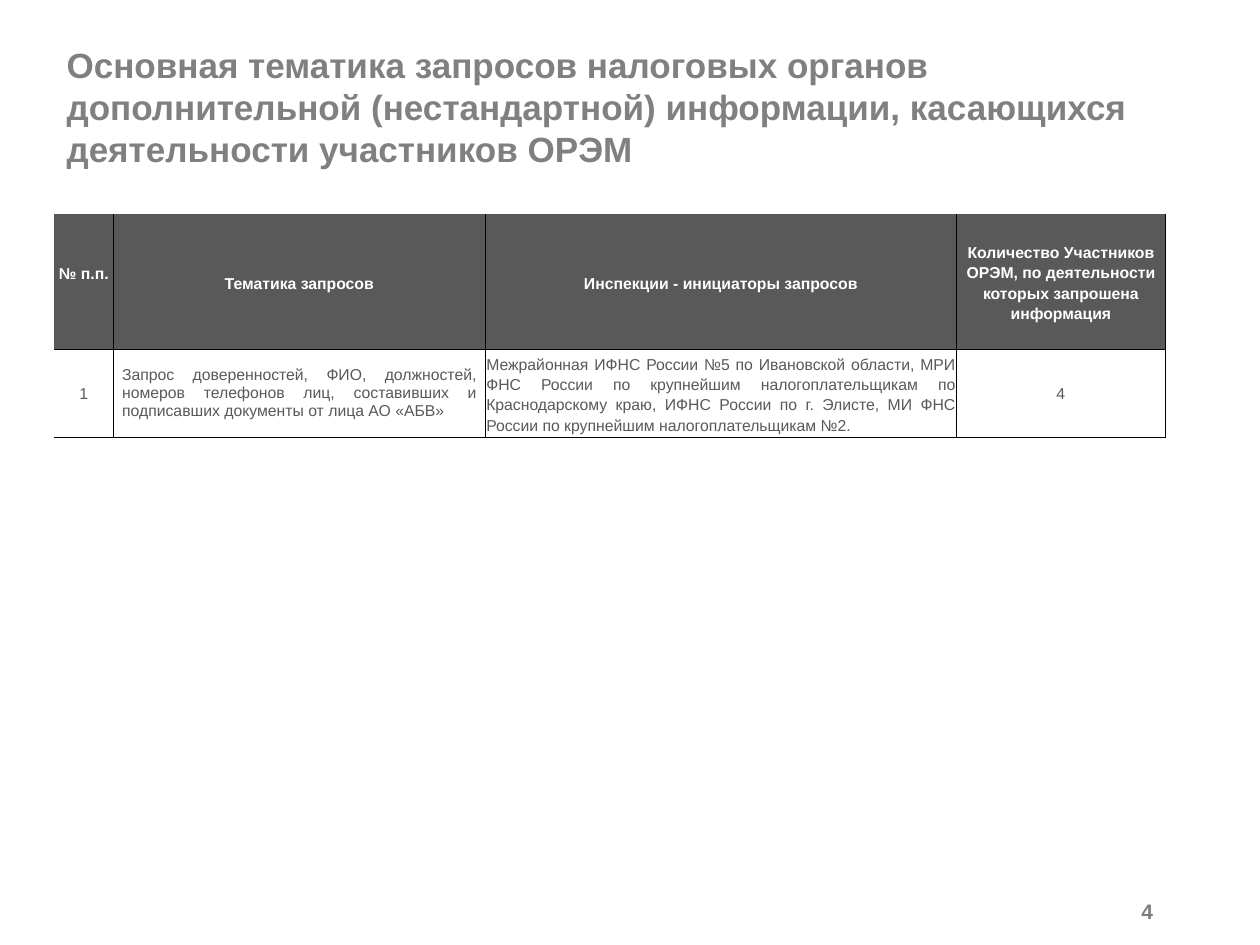
from dataclasses import dataclass

from lxml.etree import SubElement
from pptx import Presentation
from pptx.dml.color import RGBColor
from pptx.enum.text import MSO_ANCHOR as Anchor, PP_ALIGN as Align
from pptx.oxml.ns import qn
from pptx.util import Inches, Pt


@dataclass(frozen=True)
class Theme:
    font: str = "Arial"
    title_color: str = "808080"
    number_color: str = "7F7F7F"
    dark: str = "595959"
    white: str = "FFFFFF"
    border: str = "000000"
    title_size: float = 20
    number_size: float = 12
    table_size: float = 9
    border_width: float = 0.5


THEME = Theme()
TIGHT = (0.01, 0.01, 0.01, 0)
PADDED = (0.07, 0, 0.07, 0)
RAISED = (0.01, 0.01, 0.01, 0.13)

COLUMN_WIDTHS = (0.47, 2.95, 3.74, 1.66)
ROW_HEIGHTS = (1.07, 0.65)
HEADER = (
    "№ п.п.",
    "Тематика запросов",
    "Инспекции - инициаторы запросов",
    "Количество Участников ОРЭМ, по деятельности которых запрошена информация",
)
REQUEST = (
    "1",
    "Запрос доверенностей, ФИО, должностей, номеров телефонов лиц, "
    "составивших и подписавших документы от лица АО «АБВ»",
    "Межрайонная ИФНС России №5 по Ивановской области, МРИ ФНС России по "
    "крупнейшим налогоплательщикам по Краснодарскому краю, ИФНС России по "
    "г. Элисте, МИ ФНС России по крупнейшим налогоплательщикам №2.",
    "4",
)
# Alignment, line spacing and margins for each column
HEADER_FORMATS = ((Align.CENTER, 1, RAISED),) + ((Align.CENTER, 1.15, TIGHT),) * 3
REQUEST_FORMATS = (
    (Align.CENTER, 1.15, PADDED),
    (Align.JUSTIFY, 1, PADDED),
    (Align.JUSTIFY, 1.15, TIGHT),
    (Align.CENTER, 1.15, PADDED),
)


def write_text(frame, text, *, size, color, bold=False, align=Align.LEFT, spacing=1):
    frame.word_wrap = True
    paragraph = frame.paragraphs[0]
    paragraph.alignment = align
    paragraph.line_spacing = spacing
    run = paragraph.add_run()
    run.text = text
    run.font.name = THEME.font
    run.font.size = Pt(size)
    run.font.bold = bold
    run.font.color.rgb = RGBColor.from_string(color)


def set_borders(cell, hidden_sides):
    properties = cell._tc.get_or_add_tcPr()
    for side in "LRTB":
        line = SubElement(properties, qn(f"a:ln{side}"), w=str(Pt(THEME.border_width)))
        if side in hidden_sides:
            SubElement(line, qn("a:noFill"))
        else:
            fill = SubElement(line, qn("a:solidFill"))
            SubElement(fill, qn("a:srgbClr"), val=THEME.border)


class SlideBuilder:
    def __init__(self, slide, theme):
        self.slide = slide
        self.theme = theme

    def add_text(self, text, left, top, width, height, **text_format):
        box = self.slide.shapes.add_textbox(
            Inches(left), Inches(top), Inches(width), Inches(height)
        )
        box.text_frame.vertical_anchor = Anchor.MIDDLE
        write_text(box.text_frame, text, **text_format)

    def add_table(self, left, top):
        frame = self.slide.shapes.add_table(
            len(ROW_HEIGHTS), len(COLUMN_WIDTHS), Inches(left), Inches(top),
            Inches(sum(COLUMN_WIDTHS)), Inches(sum(ROW_HEIGHTS)),
        )
        table = frame.table
        table.first_row = table.horz_banding = False
        for column, width in zip(table.columns, COLUMN_WIDTHS):
            column.width = Inches(width)
        for row, height in zip(table.rows, ROW_HEIGHTS):
            row.height = Inches(height)
        self.fill_row(table.rows[0], HEADER, HEADER_FORMATS, is_header=True)
        self.fill_row(table.rows[1], REQUEST, REQUEST_FORMATS)

    def fill_row(self, row, texts, formats, is_header=False):
        background, color = self.theme.white, self.theme.dark
        if is_header:
            background, color = color, background
        for index, (cell, text, cell_format) in enumerate(zip(row.cells, texts, formats)):
            align, spacing, margins = cell_format
            set_borders(cell, ("T" if is_header else "") + ("L" if index == 0 else ""))
            cell.fill.solid()
            cell.fill.fore_color.rgb = RGBColor.from_string(background)
            cell.vertical_anchor = Anchor.MIDDLE
            (cell.margin_left, cell.margin_top,
             cell.margin_right, cell.margin_bottom) = map(Inches, margins)
            write_text(cell.text_frame, text, size=self.theme.table_size, color=color,
                       bold=is_header, align=align, spacing=spacing)


def main():
    presentation = Presentation()
    presentation.slide_width = Inches(10)
    presentation.slide_height = Inches(7.5)
    slide = presentation.slides.add_slide(presentation.slide_layouts[6])
    builder = SlideBuilder(slide, THEME)
    builder.add_text(
        "Основная тематика запросов налоговых органов дополнительной "
        "(нестандартной) информации, касающихся деятельности участников ОРЭМ",
        0.43, 0.3, 8.82, 1.09,
        size=THEME.title_size, color=THEME.title_color, bold=True,
    )
    builder.add_table(0.43, 1.7)
    builder.add_text(
        "4", 8.15, 7.06, 1.1, 0.34, size=THEME.number_size,
        color=THEME.number_color, bold=True, align=Align.RIGHT,
    )
    presentation.save("out.pptx")


if __name__ == "__main__":
    main()
